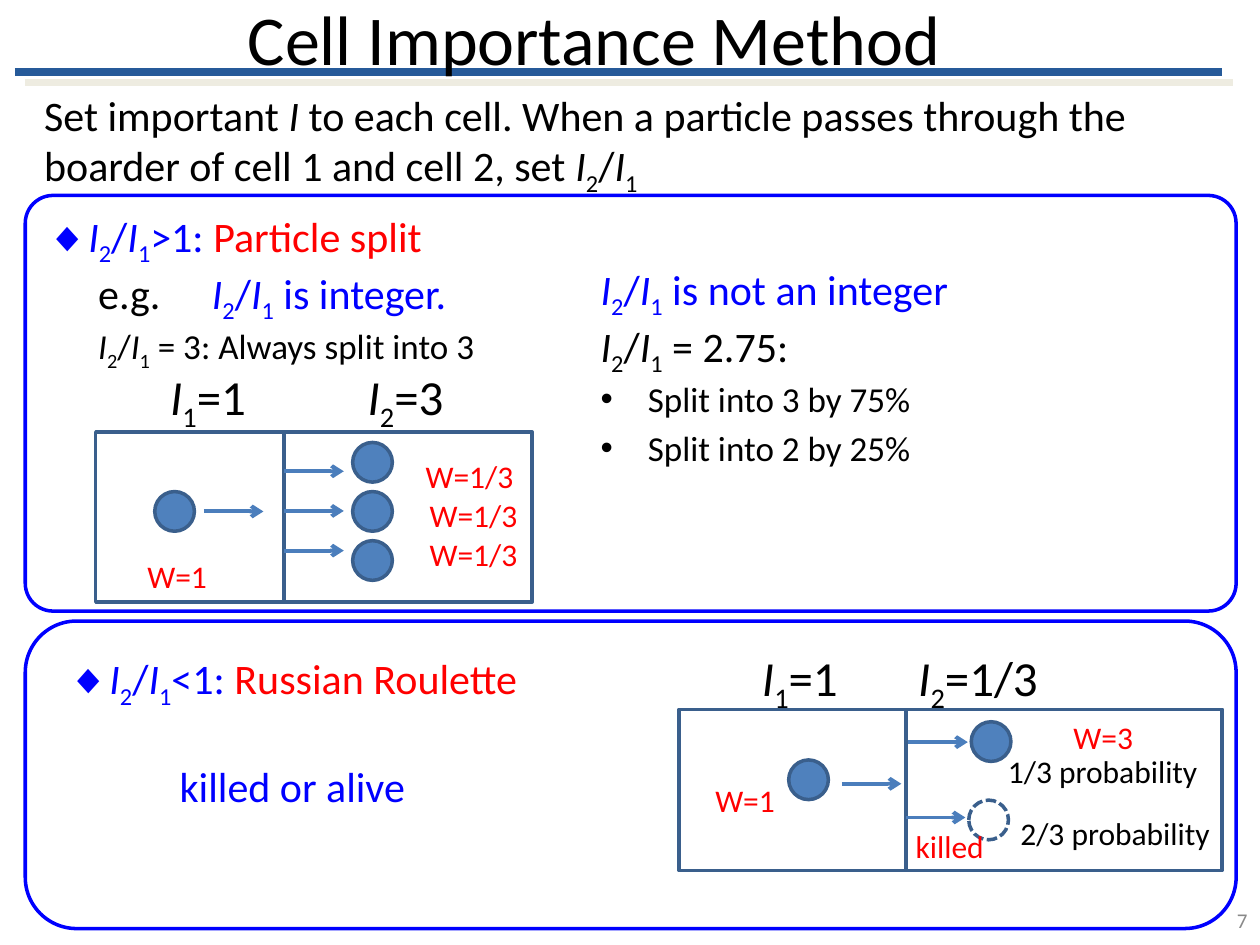
import pptx
import pptx.util
import pptx.dml.color
import pptx.enum.dml
import pptx.enum.shapes
import pptx.enum.text
import pptx.oxml
import pptx.oxml.ns
from dataclasses import dataclass
from lxml import etree

Cm, Pt = pptx.util.Cm, pptx.util.Pt
SHAPE = pptx.enum.shapes.MSO_SHAPE
ALIGN = pptx.enum.text.PP_ALIGN
ANCHOR = pptx.enum.text.MSO_ANCHOR


@dataclass(frozen=True)
class Theme:
    font: str = "Calibri"
    black: str = "000000"
    blue: str = "0000FF"
    red: str = "FF0000"
    grey: str = "898989"
    particle: str = "4F81BD"
    outline: str = "3A5F8C"
    arrow: str = "4B7EBC"
    rule: str = "265A99"
    rule_shadow: str = "EEECE1"
    title: int = 40
    formula: int = 28
    body: int = 24
    detail: int = 20
    label: int = 18
    number: int = 12


def rgb(value):
    return pptx.dml.color.RGBColor.from_string(value)


def add_xml(parent, tag, **attributes):
    child = etree.SubElement(parent, pptx.oxml.ns.qn(tag))
    for key, value in attributes.items():
        child.set(key, str(value))
    return child


@dataclass
class Para:
    """Phrases are (text, colour); in a text, | divides pieces, I is italic, _ is subscript."""
    phrases: list
    size: int
    bullet: str = ""
    hang: float = 0
    before: float = 0


class Builder:
    def __init__(self, slide, theme):
        self.slide, self.theme = slide, theme

    def text(self, paras, x, y, w, h, align=ALIGN.LEFT, wrap=True, middle=False):
        frame = self.slide.shapes.add_textbox(Cm(x), Cm(y), Cm(w), Cm(h)).text_frame
        frame.word_wrap = wrap
        if middle:
            frame.vertical_anchor = ANCHOR.MIDDLE
        else:
            frame.auto_size = pptx.enum.text.MSO_AUTO_SIZE.SHAPE_TO_FIT_TEXT
        for index, para in enumerate(paras):
            line = frame.add_paragraph() if index else frame.paragraphs[0]
            line.alignment = align
            if para.before:
                line.space_before = Pt(para.before)
            if para.bullet:
                props = line._p.get_or_add_pPr()
                props.set("marL", str(Cm(para.hang)))
                props.set("indent", str(-Cm(para.hang)))
                add_xml(props, "a:buFont", typeface="Arial")
                add_xml(props, "a:buChar", char=para.bullet)
            for words, colour in para.phrases:
                for piece in words.split("|"):
                    run = line.add_run()
                    run.text = piece.lstrip("_")
                    run.font.name, run.font.size = self.theme.font, Pt(para.size)
                    run.font.color.rgb = rgb(colour)
                    run.font.italic = piece == "I"
                    if piece.startswith("_"):
                        run.font._element.set("baseline", "-25000")

    def label(self, words, x, y, w, colour=None, size=None, h=1.02):
        phrase = (words, colour or self.theme.red)
        self.text([Para([phrase], size or self.theme.label)], x, y, w, h, wrap=False)

    def formula(self, words, x, y, w=2.11):
        self.label(words, x, y, w, self.theme.black, self.theme.formula, 1.45)

    def outline(self, kind, x, y, w, h, colour=None, fill=None):
        shape = self.slide.shapes.add_shape(kind, Cm(x), Cm(y), Cm(w), Cm(h))
        shape.shadow.inherit = False
        if fill:
            shape.fill.solid()
            shape.fill.fore_color.rgb = rgb(fill)
        else:
            shape.fill.background()
        shape.line.color.rgb = rgb(colour or self.theme.outline)
        shape.line.width = Pt(2)
        return shape

    def panel(self, x, y, w, h, corner):
        self.outline(SHAPE.ROUNDED_RECTANGLE, x, y, w, h, self.theme.blue).adjustments[0] = corner

    def cells(self, x, y, widths, h):
        for w in widths:
            self.outline(SHAPE.RECTANGLE, x, y, w, h)
            x += w

    def particle(self, x, y, alive=True):
        circle = self.outline(SHAPE.OVAL, x, y, 0.8, 0.8, fill=self.theme.particle if alive else None)
        if not alive:
            circle.line.dash_style = pptx.enum.dml.MSO_LINE.SQUARE_DOT

    def line(self, x, y, length, colour, width):
        line = self.slide.shapes.add_connector(
            pptx.enum.shapes.MSO_CONNECTOR.STRAIGHT, Cm(x), Cm(y), Cm(x + length), Cm(y))
        line.line.color.rgb, line.line.width = rgb(colour), Pt(width)
        return line, add_xml(line._element.spPr, "a:effectLst")

    def arrow(self, x, y):
        line, _ = self.line(x, y, 1.2, self.theme.arrow, 2.25)
        add_xml(line._element.spPr.get_or_add_ln(), "a:tailEnd", type="arrow")

    def rule(self, x, y, length):
        _, effects = self.line(x, y, length, self.theme.rule, 4.5)
        shadow = add_xml(effects, "a:outerShdw", dist=Pt(8.5), dir=45 * 60000, algn="tl", rotWithShape=0)
        add_xml(shadow, "a:srgbClr", val=self.theme.rule_shadow)


def main():
    deck = pptx.Presentation()
    deck.slide_width, deck.slide_height = Cm(25.4), Cm(19.05)
    theme = Theme()
    page = Builder(deck.slides.add_slide(deck.slide_layouts[6]), theme)
    black, blue, red = theme.black, theme.blue, theme.red
    ratio = "I|_2|/|I|_1"

    # Heading and introduction
    page.rule(0.3, 1.45, 24.34)
    page.text([Para([("Cell Importance Method", black)], theme.title)],
              0, -0.08, 23.95, 1.68, ALIGN.CENTER, middle=True)
    intro = ("Set important |I| to each cell. When a particle passes through the "
             "boarder of cell 1 and cell 2, set |" + ratio)
    page.text([Para([(intro, black)], theme.body)], 0.64, 1.68, 24, 2.31)

    # Particle split: explanation
    page.panel(0.51, 3.94, 24.41, 8.38, 0.067)
    page.text([Para([(ratio + "|>1: ", blue), ("Particle split", red)], theme.body, "◆")],
              0.69, 4.11, 8.51, 1.3, wrap=False)
    page.text([Para([("e.g.　 ", black), (ratio + "| is integer.", blue)], theme.body),
               Para([(ratio + "| = 3: Always split into 3", black)], theme.detail)],
              1.73, 5.26, 8.48, 2.13, wrap=False)
    page.text([Para([(ratio + "| is not an integer", blue)], theme.body),
               Para([(ratio + "| = 2.75:", black)], theme.body),
               Para([("Split into 3 by 75%", black)], theme.detail, "•", 0.95),
               Para([("Split into 2 by 25%", black)], theme.detail, "•", 0.95, 4)],
              11.86, 5.18, 12.88, 4.19)

    # Particle split: one particle becomes three
    page.cells(1.93, 8.71, (3.8, 5), 3.43)
    page.formula("I|_1|=1", 3.18, 7.26)
    page.formula("I|_2|=3", 7.16, 7.26)
    page.particle(3.12, 9.91)
    page.arrow(4.11, 10.31)
    page.label("W=1", 2.72, 11.1, 1.73)
    for row, weight_x in enumerate((8.33, 8.41, 8.41)):
        page.arrow(5.73, 9.5 + 0.8 * row)
        page.particle(7.11, 8.92 + 0.99 * row)
        page.label("W=1/3", weight_x, 9.09 + 0.79 * row, 2.31)

    # Russian roulette: explanation
    page.panel(0.51, 12.52, 24.41, 6.2, 0.167)
    page.text([Para([(ratio + "|<1: ", blue), ("Russian Roulette", red)], theme.body, "◆"),
               Para([("killed or alive", blue)], theme.body, before=29)],
              0.56, 13.03, 10.67, 3.33, ALIGN.CENTER)

    # Russian roulette: survival or death at the border
    page.cells(13.69, 14.3, (4.57, 6.38), 3.25)
    page.formula("I|_1|=1", 15.11, 12.93)
    page.formula("I|_2|=1/3", 18.26, 12.93, 3)
    for x, y in ((16.97, 15.8), (18.31, 14.96), (18.26, 16.48)):
        page.arrow(x, y)
    page.particle(15.9, 15.32)
    page.particle(19.58, 14.55)
    page.particle(19.53, 16.13, alive=False)
    page.label("W=1", 14.17, 15.62, 1.73)
    page.label("W=3", 21.39, 14.35, 1.73)
    page.label("killed", 18.21, 16.54, 1.91)
    page.label("1/3 probability", 20.07, 15.04, 4.37, black)
    page.label("2/3 probability", 20.32, 16.28, 4.37, black)

    # Slide number
    page.text([Para([("7", theme.grey)], theme.number)],
              19.48, 18.03, 5.92, 1.02, ALIGN.RIGHT, middle=True)

    deck.save("out.pptx")


if __name__ == "__main__":
    main()
